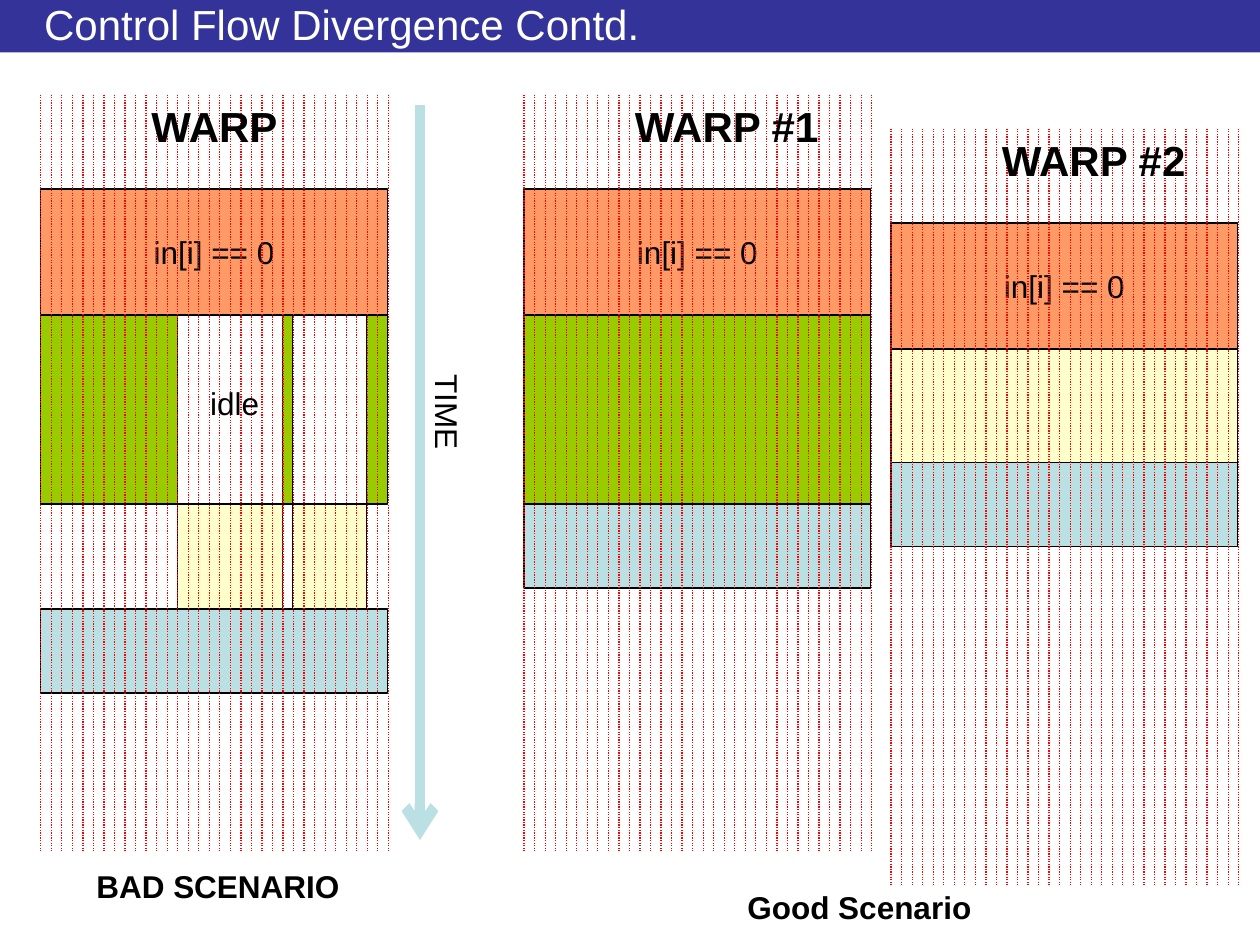
from lxml.etree import SubElement
from pptx import Presentation
from pptx.dml.color import RGBColor
from pptx.enum.dml import MSO_LINE_DASH_STYLE as Dash
from pptx.enum.shapes import MSO_CONNECTOR as Connector, MSO_SHAPE as Shape
from pptx.enum.text import MSO_ANCHOR as Anchor, MSO_AUTO_SIZE as AutoSize, PP_ALIGN as Align
from pptx.oxml.ns import qn
from pptx.util import Pt

COLORS = {
    "bar": "333399", "white": "FFFFFF", "black": "000000", "lane": "FF0000",
    "test": "FF9966", "then": "99CC00", "else": "FFFFCC", "after": "BBE0E3",
}
LANES = 33
LANE_WIDTH = 6
LANE_PITCH = 6.02
WARP_HEIGHT = 432
HEADER_HEIGHT = 54

# Each warp: name, label width, left, top, and its rows.
# Each row: height and its blocks (first lane, end lane, colour, text).
TEST_ROW = (72, [(0, LANES, "test", "in[i] == 0")])
AFTER_ROW = (48, [(0, LANES, "after", "")])
WARPS = [
    ("WARP #1", 121, 299.5, 54,
     [TEST_ROW, (108, [(0, LANES, "then", "")]), AFTER_ROW]),
    ("WARP", 88, 23.3, 54,
     [TEST_ROW,
      (108, [(0, 13, "then", ""), (23, 24, "then", ""), (31, LANES, "then", "")]),
      (60, [(13, 23, "else", ""), (24, 31, "else", "")]),
      AFTER_ROW]),
    ("WARP #2", 121, 509.2, 73.5,
     [TEST_ROW, (64.8, [(0, LANES, "else", "")]), AFTER_ROW]),
]


def rgb(name):
    return RGBColor.from_string(COLORS[name])


def apply_format(target, values):
    for name, value in values.items():
        setattr(target, name, value)


class SlideBuilder:
    font_name = "Arial"

    def __init__(self, slide):
        self.slide = slide

    def set_text(self, shape, text, size=18, color="black", bold=False, align=Align.LEFT, **frame):
        apply_format(shape.text_frame, {"word_wrap": False, **frame})
        paragraph = shape.text_frame.paragraphs[0]
        paragraph.alignment = align
        run = paragraph.add_run()
        run.text = text
        apply_format(run.font, {"name": self.font_name, "size": Pt(size), "bold": bold})
        run.font.color.rgb = rgb(color)

    def title(self, text, left, top, width, height):
        shape = self.slide.shapes.title
        apply_format(shape, {"left": Pt(left), "top": Pt(top),
                             "width": Pt(width), "height": Pt(height)})
        self.set_text(shape, text, 24, "white", word_wrap=True,
                      vertical_anchor=Anchor.MIDDLE, auto_size=AutoSize.NONE)

    def block(self, left, top, width, height, fill, text="", outline=True):
        shape = self.slide.shapes.add_shape(
            Shape.RECTANGLE, Pt(left), Pt(top), Pt(width), Pt(height))
        shape.shadow.inherit = False
        shape.fill.solid()
        shape.fill.fore_color.rgb = rgb(fill)
        if outline:
            shape.line.color.rgb = rgb("black")
            shape.line.width = Pt(0.75)
        else:
            shape.line.fill.background()
        if text:
            self.set_text(shape, text, align=Align.CENTER, vertical_anchor=Anchor.MIDDLE)
        return shape

    def label(self, text, left, top, width, height=29, rotation=0, **style):
        shape = self.slide.shapes.add_textbox(Pt(left), Pt(top), Pt(width), Pt(height))
        shape.rotation = rotation
        self.set_text(shape, text, auto_size=AutoSize.SHAPE_TO_FIT_TEXT, **style)

    def vertical_line(self, x, top, bottom, color, width=0.75, dash=None, arrow=False):
        connector = self.slide.shapes.add_connector(
            Connector.STRAIGHT, Pt(x), Pt(top), Pt(x), Pt(bottom))
        connector.line.color.rgb = rgb(color)
        apply_format(connector.line, {"width": Pt(width), "dash_style": dash})
        properties = connector.element.spPr
        if arrow:
            SubElement(properties.find(qn("a:ln")), qn("a:tailEnd"), type="arrow")
        SubElement(properties, qn("a:effectLst"))

    def warp(self, name, label_width, left, top, rows):
        row_top = top + HEADER_HEIGHT
        for height, blocks in rows:
            for first, end, color, text in blocks:
                self.block(left + first * LANE_WIDTH, row_top,
                           (end - first) * LANE_WIDTH, height, color, text)
            row_top += height
        for lane in range(LANES + 1):
            self.vertical_line(left + lane * LANE_PITCH, top, top + WARP_HEIGHT,
                               "lane", dash=Dash.ROUND_DOT)
        self.label(name, left + 56.2, top, label_width, 36, size=24, bold=True)


def main():
    presentation = Presentation()
    apply_format(presentation, {"slide_width": Pt(720), "slide_height": Pt(540)})
    slide = presentation.slides.add_slide(presentation.slide_layouts[5])
    builder = SlideBuilder(slide)

    bar = builder.block(0, 0, 720, 30, "bar", outline=False)
    slide.shapes.title.element.addprevious(bar.element)
    builder.title("Control Flow Divergence Contd.", 18, 3.6, 666, 20.2)

    builder.vertical_line(240, 60, 480, "after", width=6, arrow=True)
    builder.label("TIME", 226.8, 221, 57.6, rotation=90)
    builder.label("BAD SCENARIO", 48, 492, 153.4, bold=True)
    for warp in WARPS:
        builder.warp(*warp)
    builder.label("idle", 113, 216, 42.5)
    builder.label("Good Scenario", 420, 504, 142.5, bold=True)
    presentation.save("out.pptx")


if __name__ == "__main__":
    main()
